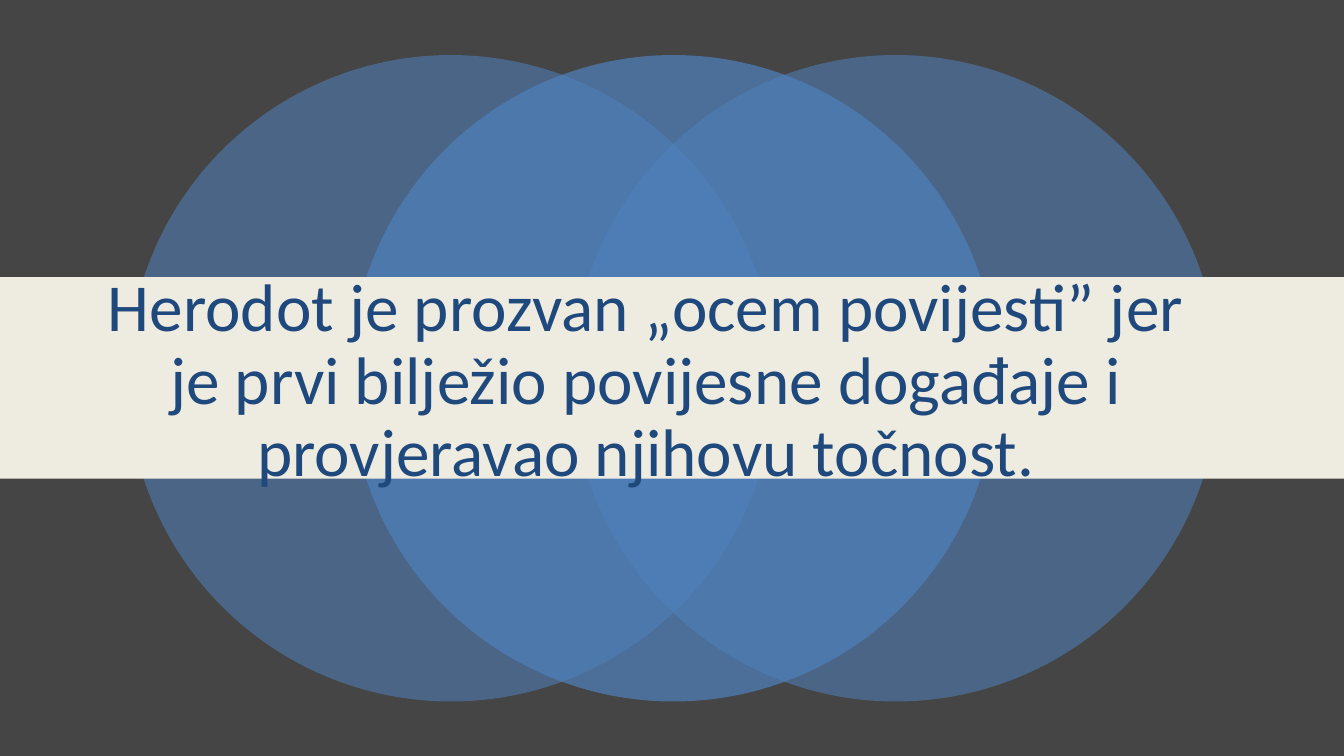
from dataclasses import dataclass

from lxml import etree
from pptx import Presentation
from pptx import util as u
from pptx.dml.color import RGBColor
from pptx.enum import shapes, text
from pptx.oxml.ns import qn


@dataclass(frozen=True)
class Theme:
    background: str = "454545"
    circle: str = "4F81BD"
    band: str = "EEECE1"
    title: str = "1F497D"
    font: str = "Calibri"
    title_size: int = 36


THEME = Theme()
WIDTH = 10
HEIGHT = WIDTH * 9 / 16


def add_filled_shape(slide, kind, box, color, opacity=100):
    """Add a borderless shape; opacity is in percent."""
    shape = slide.shapes.add_shape(kind, *(u.Inches(length) for length in box))
    shape.shadow.inherit = False
    shape.line.fill.background()
    shape.fill.solid()
    shape.fill.fore_color.rgb = RGBColor.from_string(color)
    if opacity < 100:
        color_element = shape.element.spPr.find(qn("a:solidFill"))[0]
        etree.SubElement(color_element, qn("a:alpha")).set("val", str(opacity * 1000))
    return shape


def add_circles(slide, box):
    """Three overlapping circles, spread evenly over the box, middle one on top."""
    left, top, width, diameter = box
    step = (width - diameter) / 2
    for column, opacity in ((0, 55), (2, 55), (1, 70)):
        circle_box = (left + column * step, top, diameter, diameter)
        add_filled_shape(slide, shapes.MSO_SHAPE.OVAL, circle_box, THEME.circle, opacity)


def add_title(slide, box, words):
    """Centred title text."""
    title = slide.shapes.add_textbox(*(u.Inches(length) for length in box))
    frame = title.text_frame
    frame.word_wrap = True
    frame.vertical_anchor = text.MSO_ANCHOR.MIDDLE
    paragraph = frame.paragraphs[0]
    paragraph.alignment = text.PP_ALIGN.CENTER
    paragraph.line_spacing = 0.9
    run = paragraph.add_run()
    run.text = words
    run.font.name = THEME.font
    run.font.size = u.Pt(THEME.title_size)
    run.font.color.rgb = RGBColor.from_string(THEME.title)


def main():
    presentation = Presentation()
    presentation.slide_width = u.Inches(WIDTH)
    presentation.slide_height = u.Inches(HEIGHT)
    slide = presentation.slides.add_slide(presentation.slide_layouts[6])

    # Background
    slide.background.fill.solid()
    slide.background.fill.fore_color.rgb = RGBColor.from_string(THEME.background)

    # Circles
    add_circles(slide, (0.95, 0.41, 8.12, 4.81))

    # Band across the middle of the slide
    band_height = 1.5
    band_box = (0, (HEIGHT - band_height) / 2, WIDTH, band_height)
    add_filled_shape(slide, shapes.MSO_SHAPE.RECTANGLE, band_box, THEME.band)

    # Title
    add_title(
        slide,
        (0.66, 2.28, 8.29, 1.13),
        "Herodot je prozvan „ocem povijesti” jer je prvi bilježio "
        "povijesne događaje i provjeravao njihovu točnost.",
    )

    presentation.save("out.pptx")


if __name__ == "__main__":
    main()
